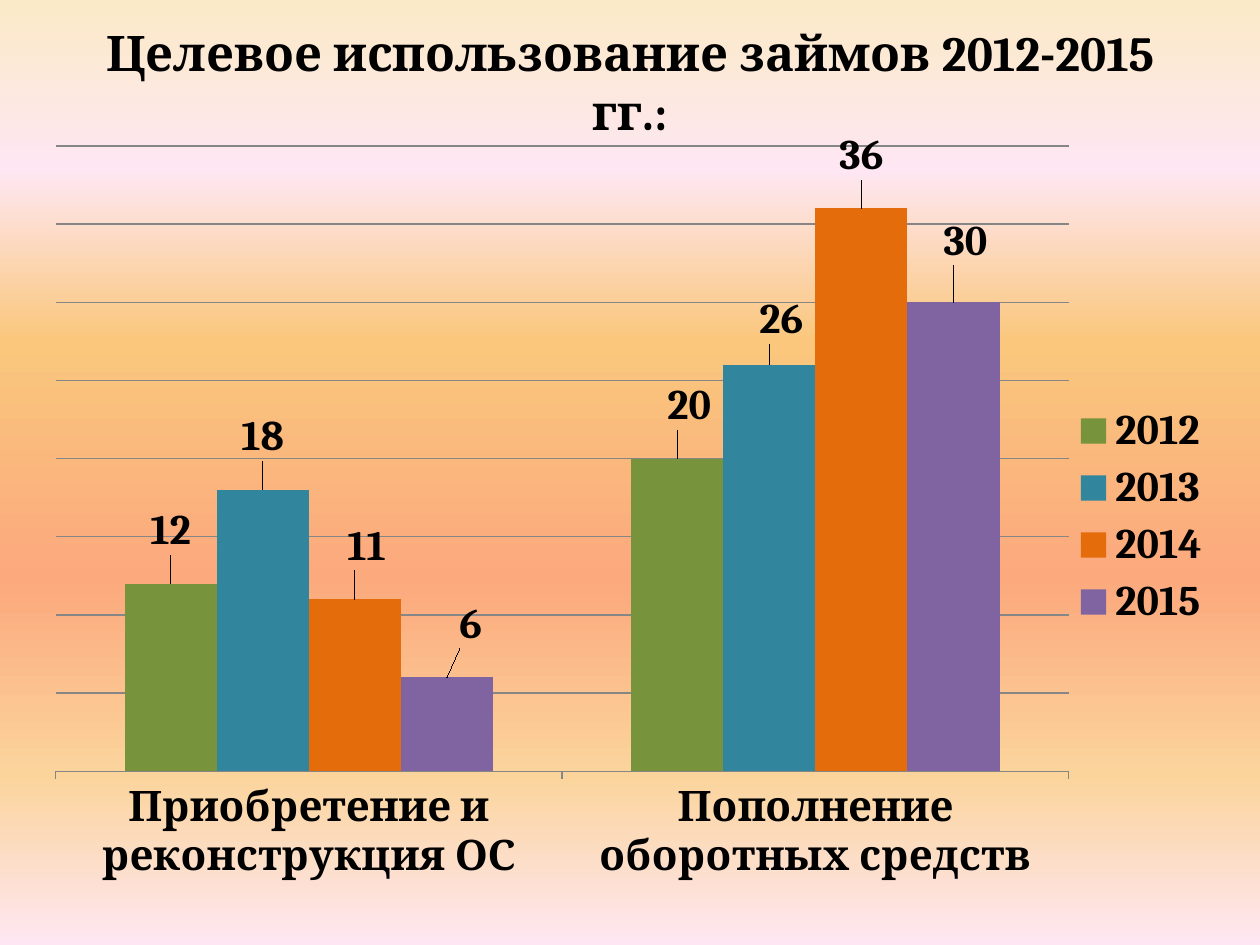
"""Build a slide with a clustered column chart of loan use by year."""
import pptx
import pptx.chart.data
import pptx.dml.color
import pptx.enum.chart
import pptx.enum.text
import pptx.oxml
import pptx.oxml.ns
import pptx.util

WIDE, HIGH = 10, 7.5
FONT = "Cambria"
TITLE = "Целевое использование займов 2012-2015 гг.:"
CATS = ["Приобретение и реконструкция ОС", "Пополнение оборотных средств"]
YEARS = {
    "2012": (12, 20),
    "2013": (18, 26),
    "2014": (11, 36),
    "2015": (6, 30),
}
SHIFTS = {
    "2012": ((0, -0.03), (0.01, -0.03)),
    "2013": ((0, -0.03), (0.01, -0.02)),
    "2014": ((0.01, -0.03), (0, -0.03)),
    "2015": ((0.02, -0.03), (0.01, -0.04)),
}
COLORS = {
    "text": "000000", "grid": "868686",
    "2012": "77933C", "2013": "31859C", "2014": "E46C0A", "2015": "8064A2",
}
STOPS = [(0, "FBEAC7"), (18, "FEE7F2"), (36, "FAC77D"),
         (61, "FBA97D"), (82, "FBD49C"), (100, "FEE7F2")]
PLOT = {"x": 0.017, "y": 0.027, "w": 0.851, "h": 0.798}


def rgb(name):
    return pptx.dml.color.RGBColor.from_string(COLORS[name])


def style(font, size, name=FONT, bold=True):
    font.size, font.name, font.bold = pptx.util.Pt(size), name, bold
    font.color.rgb = rgb("text")


def place(shape, left, top, width, height):
    shape.left, shape.top = pptx.util.Inches(left), pptx.util.Inches(top)
    shape.width, shape.height = pptx.util.Inches(width), pptx.util.Inches(height)


def layout(sizes, inner=False):
    modes = '<c:layoutTarget val="inner"/>' if inner else ""
    if inner:
        modes += '<c:xMode val="edge"/><c:yMode val="edge"/>'
    vals = "".join(f'<c:{key} val="{val}"/>' for key, val in sizes.items())
    return pptx.oxml.parse_xml(
        f'<c:layout {pptx.oxml.ns.nsdecls("c")}><c:manualLayout>'
        f'{modes}{vals}</c:manualLayout></c:layout>')


def paint(slide):
    fill = slide.background.fill
    fill.gradient()
    fill.gradient_angle = 270
    grad = slide.element.find(".//" + pptx.oxml.ns.qn("a:gradFill"))
    stops = "".join(f'<a:gs pos="{pos * 1000}"><a:srgbClr val="{tone}"/></a:gs>'
                    for pos, tone in STOPS)
    grad.replace(grad[0], pptx.oxml.parse_xml(
        f'<a:gsLst {pptx.oxml.ns.nsdecls("a")}>{stops}</a:gsLst>'))


def add_title(slide):
    title = slide.shapes.title
    place(title, 0.05 * WIDE, 0.04 * HIGH, 0.9 * WIDE, 0.69)
    frame = title.text_frame
    frame.text = TITLE
    frame.word_wrap = True
    frame.auto_size = pptx.enum.text.MSO_AUTO_SIZE.NONE
    frame.vertical_anchor = pptx.enum.text.MSO_ANCHOR.MIDDLE
    frame.paragraphs[0].alignment = pptx.enum.text.PP_ALIGN.CENTER
    style(frame.paragraphs[0].runs[0].font, 28)


def add_bars(slide):
    data = pptx.chart.data.CategoryChartData()
    data.categories = CATS
    for year, vals in YEARS.items():
        data.add_series(year, vals)
    frame = slide.shapes.add_chart(
        pptx.enum.chart.XL_CHART_TYPE.COLUMN_CLUSTERED, 0, 0, 1, 1, data)
    place(frame, 0.28, 0.99, 9.45, 6.22)
    chart = frame.chart
    style(chart.font, 18, "Calibri", False)
    chart.has_title = False
    chart.has_legend = True
    chart.legend.position = pptx.enum.chart.XL_LEGEND_POSITION.RIGHT
    chart.legend.include_in_layout = False
    style(chart.legend.font, 24)

    axis = chart.category_axis
    style(axis.tick_labels.font, 24)
    axis.major_tick_mark = pptx.enum.chart.XL_TICK_MARK.OUTSIDE
    scale = chart.value_axis
    scale.minimum_scale, scale.maximum_scale, scale.major_unit = 0, 40, 5
    scale.has_major_gridlines = True
    scale.visible = False
    for line in (axis.format.line, scale.major_gridlines.format.line):
        line.color.rgb = rgb("grid")
        line.width = pptx.util.Pt(0.75)

    plot = chart.plots[0]
    plot.gap_width, plot.overlap, plot.vary_by_categories = 150, 0, False
    area = chart.element.find(".//" + pptx.oxml.ns.qn("c:plotArea"))
    for old in area.findall(pptx.oxml.ns.qn("c:layout")):
        area.remove(old)
    area.insert(0, layout(PLOT, inner=True))
    for bars in plot.series:
        bars.format.fill.solid()
        bars.format.fill.fore_color.rgb = rgb(bars.name)
        bars.data_labels.show_value = True
        style(bars.data_labels.font, 24)
        for spot, (dx, dy) in enumerate(SHIFTS[bars.name]):
            label = bars.points[spot].data_label
            style(label.font, 24)
            label.position = pptx.enum.chart.XL_LABEL_POSITION.OUTSIDE_END
        tags = bars.data_labels._element.findall(pptx.oxml.ns.qn("c:dLbl"))
        for tag, (dx, dy) in zip(tags, SHIFTS[bars.name]):
            tag.insert(1, layout({"x": dx, "y": dy}))


def main():
    deck = pptx.Presentation()
    deck.slide_width = pptx.util.Inches(WIDE)
    deck.slide_height = pptx.util.Inches(HIGH)
    slide = deck.slides.add_slide(deck.slide_layouts[5])
    paint(slide)
    add_title(slide)
    add_bars(slide)
    deck.save("out.pptx")


if __name__ == "__main__":
    main()
